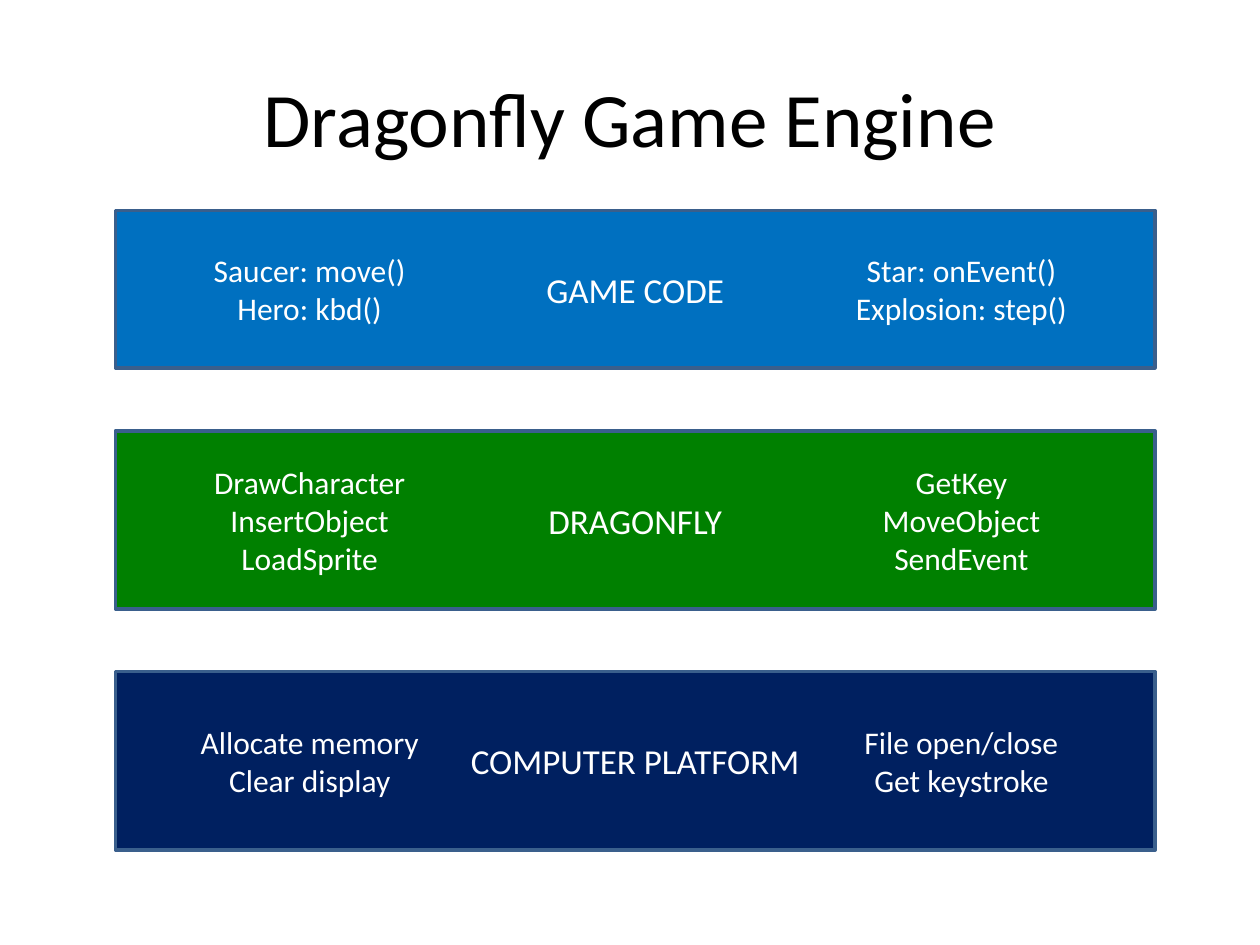
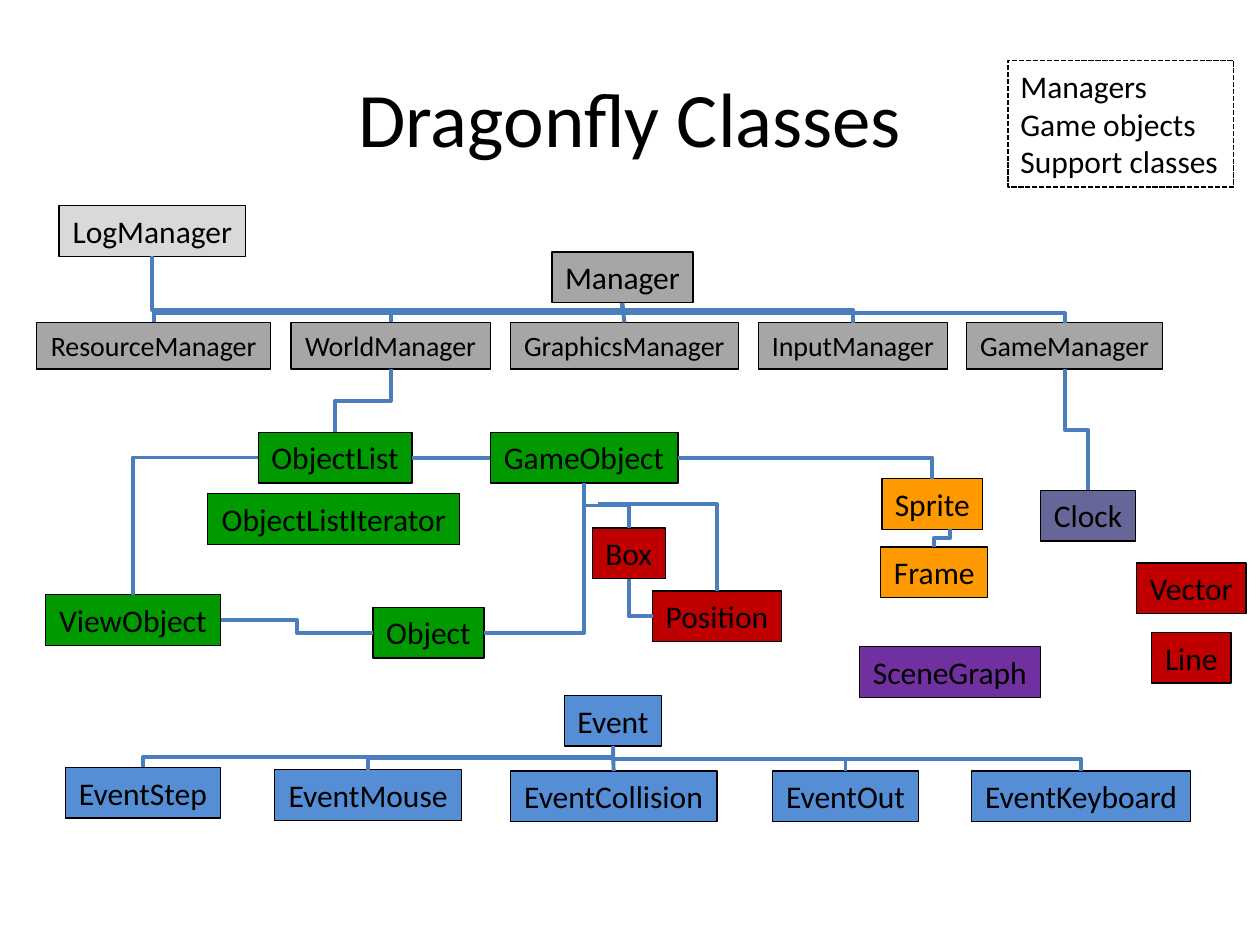
from lxml import etree
from pptx import Presentation
from pptx.dml.color import RGBColor
from pptx.enum.dml import MSO_LINE
from pptx.enum.shapes import MSO_CONNECTOR, MSO_SHAPE
from pptx.enum.text import MSO_ANCHOR, MSO_AUTO_SIZE, PP_ALIGN
from pptx.oxml.ns import qn
from pptx.util import Pt

RECT = MSO_SHAPE.RECTANGLE
STRAIGHT, ELBOW = MSO_CONNECTOR.STRAIGHT, MSO_CONNECTOR.ELBOW
DASH = MSO_LINE.SQUARE_DOT
LEFT, CENTER = PP_ALIGN.LEFT, PP_ALIGN.CENTER
ANCHOR_TOP, ANCHOR_MIDDLE = MSO_ANCHOR.TOP, MSO_ANCHOR.MIDDLE
GROW = MSO_AUTO_SIZE.SHAPE_TO_FIT_TEXT
TOP_SIDE, LEFT_SIDE, BOTTOM_SIDE, RIGHT_SIDE = range(4)

BLACK = RGBColor(0x00, 0x00, 0x00)
WHITE = RGBColor(0xFF, 0xFF, 0xFF)
BAND_BLUE = RGBColor(0x00, 0x70, 0xC0)
BAND_GREEN = RGBColor(0x00, 0x80, 0x00)
BAND_NAVY = RGBColor(0x00, 0x20, 0x60)
BAND_EDGE = RGBColor(0x3A, 0x5F, 0x8C)
LINK_BLUE = RGBColor(0x4B, 0x7E, 0xBC)
GRAY = RGBColor(0xA6, 0xA6, 0xA6)
LIGHT_GRAY = RGBColor(0xD9, 0xD9, 0xD9)
GREEN = RGBColor(0x00, 0x99, 0x00)
RED = RGBColor(0xC0, 0x00, 0x00)
ORANGE = RGBColor(0xFF, 0x99, 0x00)
SLATE = RGBColor(0x66, 0x66, 0x99)
PURPLE = RGBColor(0x70, 0x30, 0xA0)
EVENT_BLUE = RGBColor(0x55, 0x8E, 0xD5)

BAND_LEFT, BAND_WIDTH = 66, 594
CAPTION_CENTERS = (177, 549.4)
BANDS = [
    ("GAME CODE", BAND_BLUE, 120.2, 90,
     ((125.3, ["Saucer: move()", "Hero: kbd()"]),
      (136.8, ["Star: onEvent()", "Explosion: step()"]))),
    ("DRAGONFLY", BAND_GREEN, 246.2, 102,
     ((125.3, ["DrawCharacter", "InsertObject", "LoadSprite"]),
      (105.1, ["GetKey", "MoveObject", "SendEvent"]))),
    ("COMPUTER PLATFORM", BAND_NAVY, 383.8, 102,
     ((140.4, ["Allocate memory", "Clear display"]),
      (126.7, ["File open/close", "Get keystroke"]))),
]

MANAGER_TOP, MANAGER_SIZE = 184.3, 16
MANAGERS = [
    ("ResourceManager", 20.9, 133.9),
    ("WorldManager", 166.3, 113.8),
    ("GraphicsManager", 291.6, 130.3),
    ("InputManager", 433.4, 108),
    ("GameManager", 552.2, 112.3),
]
CLASSES = [
    ("LogManager", LIGHT_GRAY, 33.8, 117.4, 106.6),
    ("Manager", GRAY, 315.4, 144, 80.6),
    ("ObjectList", GREEN, 147.6, 247, 87.8),
    ("GameObject", GREEN, 280.1, 247, 107.3),
    ("ObjectListIterator", GREEN, 118.8, 282.2, 144),
    ("ViewObject", GREEN, 25.9, 339.8, 100.1),
    ("Object", GREEN, 213.1, 347, 63.4),
    ("Box", RED, 338.4, 301.7, 41.8),
    ("Position", RED, 373, 337.7, 73.4),
    ("Vector", RED, 649.4, 321.8, 62.6),
    ("Line", RED, 658.1, 361.4, 45.4),
    ("Sprite", ORANGE, 504, 273.6, 57.6),
    ("Frame", ORANGE, 503.3, 312.5, 61.2),
    ("Clock", SLATE, 594.7, 280.1, 54),
    ("SceneGraph", PURPLE, 491, 369.4, 103.7),
    ("Event", EVENT_BLUE, 322.6, 397.4, 55.4),
    ("EventStep", EVENT_BLUE, 37.4, 438.5, 88.6),
    ("EventMouse", EVENT_BLUE, 157, 439.9, 106.6),
    ("EventCollision", EVENT_BLUE, 291.6, 440.6, 118.1),
    ("EventOut", EVENT_BLUE, 441.4, 440.6, 83.5),
    ("EventKeyboard", EVENT_BLUE, 555.1, 440.6, 125.3),
]
MANAGER_BUS = (355.7, 177.1)
LINKS = [
    ("Manager", BOTTOM_SIDE, "GraphicsManager", TOP_SIDE),
    ("ResourceManager", TOP_SIDE, "Manager", BOTTOM_SIDE),
    ("WorldManager", TOP_SIDE, MANAGER_BUS, LEFT_SIDE),
    ("InputManager", TOP_SIDE, MANAGER_BUS, RIGHT_SIDE),
    ("GameManager", TOP_SIDE, "Manager", BOTTOM_SIDE),
    ("LogManager", BOTTOM_SIDE, MANAGER_BUS, LEFT_SIDE),
    ("Event", BOTTOM_SIDE, "EventCollision", TOP_SIDE),
    ("EventStep", TOP_SIDE, "Event", BOTTOM_SIDE),
    ("EventMouse", TOP_SIDE, "Event", BOTTOM_SIDE),
    ("EventOut", TOP_SIDE, "Event", BOTTOM_SIDE),
    ("EventKeyboard", TOP_SIDE, "Event", BOTTOM_SIDE),
    ("WorldManager", BOTTOM_SIDE, "ObjectList", TOP_SIDE),
    ("GameObject", LEFT_SIDE, "ObjectList", RIGHT_SIDE),
    ("GameObject", RIGHT_SIDE, "Sprite", TOP_SIDE),
    ("Box", TOP_SIDE, "GameObject", BOTTOM_SIDE),
    ("Position", TOP_SIDE, (342, 288), RIGHT_SIDE),
    ("Box", BOTTOM_SIDE, "Position", LEFT_SIDE),
    ("GameManager", BOTTOM_SIDE, "Clock", TOP_SIDE),
    ("GameObject", BOTTOM_SIDE, "Object", RIGHT_SIDE),
    ("ViewObject", TOP_SIDE, "ObjectList", LEFT_SIDE),
    ("ViewObject", RIGHT_SIDE, "Object", LEFT_SIDE),
    ("Frame", TOP_SIDE, (542.9, 302.4), BOTTOM_SIDE),
]


def text_height(size, lines=1):
    return round(size * 1.2 * lines + 7.4, 2)


def side_point(sp, side):
    x = sp.left + sp.width * (0.5, 0, 0.5, 1)[side]
    y = sp.top + sp.height * (0, 0.5, 1, 0.5)[side]
    return int(x), int(y)


class Deck:
    font = "Calibri"

    def __init__(self):
        self.prs = Presentation()
        self.prs.slide_width, self.prs.slide_height = Pt(720), Pt(540)
        self.slide = None
        self.boxes = {}

    def new_slide(self, title):
        self.slide = self.prs.slides.add_slide(self.prs.slide_layouts[6])
        self.boxes = {}
        self.text([title], 36, 21.6, 648, 90, size=44, color=BLACK,
                  frame={"word_wrap": True, "vertical_anchor": ANCHOR_MIDDLE})

    def set_lines(self, sp, lines, size, color, align=CENTER, frame=None):
        tf = sp.text_frame
        fmt = frame or {"word_wrap": False, "auto_size": GROW, "vertical_anchor": ANCHOR_TOP}
        for name, value in fmt.items():
            setattr(tf, name, value)
        for i, line in enumerate(lines):
            p = tf.add_paragraph() if i else tf.paragraphs[0]
            p.alignment = align
            r = p.add_run()
            r.text = line
            for name, value in {"name": self.font, "size": Pt(size)}.items():
                setattr(r.font, name, value)
            r.font.color.rgb = color

    def text(self, lines, x, y, w, h, **style):
        sp = self.slide.shapes.add_textbox(Pt(x), Pt(y), Pt(w), Pt(h))
        self.set_lines(sp, lines, **style)

    def box(self, lines, x, y, w, h, fill=None, edge=BLACK, weight=0.75, dash=None, **style):
        sp = self.slide.shapes.add_shape(RECT, Pt(x), Pt(y), Pt(w), Pt(h))
        sp.shadow.inherit = False
        if fill is None:
            sp.fill.background()
        else:
            sp.fill.solid()
            sp.fill.fore_color.rgb = fill
        sp.line.color.rgb = edge
        for name, value in {"width": Pt(weight), "dash_style": dash}.items():
            setattr(sp.line, name, value)
        self.set_lines(sp, lines, **style)
        return sp

    def band(self, label, fill, top, height, captions):
        self.box([label], BAND_LEFT, top, BAND_WIDTH, height, fill, BAND_EDGE, 2,
                 size=20, color=WHITE,
                 frame={"word_wrap": True, "vertical_anchor": ANCHOR_MIDDLE})
        for center, (width, lines) in zip(CAPTION_CENTERS, captions):
            h = text_height(18, len(lines))
            self.text(lines, center - width / 2, top + (height - h) / 2, width, h,
                      size=18, color=WHITE)

    def class_box(self, name, fill, x, y, w, size=18):
        self.boxes[name] = self.box([name], x, y, w, text_height(size), fill,
                                    size=size, color=BLACK)

    def link(self, start, start_side, end, end_side):
        source, target = self.boxes[start], self.boxes.get(end)
        x1, y1 = side_point(source, start_side)
        x2, y2 = side_point(target, end_side) if target else map(Pt, end)
        straight = min(abs(x2 - x1), abs(y2 - y1)) < Pt(2)
        c = self.slide.shapes.add_connector(STRAIGHT if straight else ELBOW, x1, y1, x2, y2)
        c.begin_connect(source, start_side)
        if target:
            c.end_connect(target, end_side)
        if not straight:
            self.bend(c, x1, y1, x2, y2, start_side, end_side)
        c.line.color.rgb = LINK_BLUE
        c.line.width = Pt(2.25)
        etree.SubElement(c._element.spPr, qn("a:effectLst"))

    def bend(self, c, x1, y1, x2, y2, start_side, end_side):
        vertical = start_side in (TOP_SIDE, BOTTOM_SIDE)
        w, h = abs(x2 - x1), abs(y2 - y1)
        flips = {"flipH": x2 < x1, "flipV": y2 < y1}
        xfrm = c._element.spPr.find(qn("a:xfrm"))
        if vertical:
            w, h = h, w
            flips = {"flipH": y2 < y1, "flipV": x2 > x1}
            xfrm.set("rot", "5400000")
        for name, value in flips.items():
            xfrm.set(name, str(int(value)))
        place = {"left": (x1 + x2 - w) // 2, "top": (y1 + y2 - h) // 2, "width": w, "height": h}
        for name, value in place.items():
            setattr(c, name, value)
        if start_side % 2 != end_side % 2:
            c._element.spPr.find(qn("a:prstGeom")).set("prst", "bentConnector2")


def main():
    deck = Deck()
    deck.new_slide("Dragonfly Game Engine")
    for band in BANDS:
        deck.band(*band)

    deck.new_slide("Dragonfly Classes")
    for name, x, w in MANAGERS:
        deck.class_box(name, GRAY, x, MANAGER_TOP, w, MANAGER_SIZE)
    for item in CLASSES:
        deck.class_box(*item)
    for item in LINKS:
        deck.link(*item)
    deck.box(["Managers", "Game objects", "Support classes"], 576, 34.6, 128.9,
             text_height(18, 3), weight=1, dash=DASH, size=18, color=BLACK, align=LEFT)
    deck.prs.save("out.pptx")


if __name__ == "__main__":
    main()
